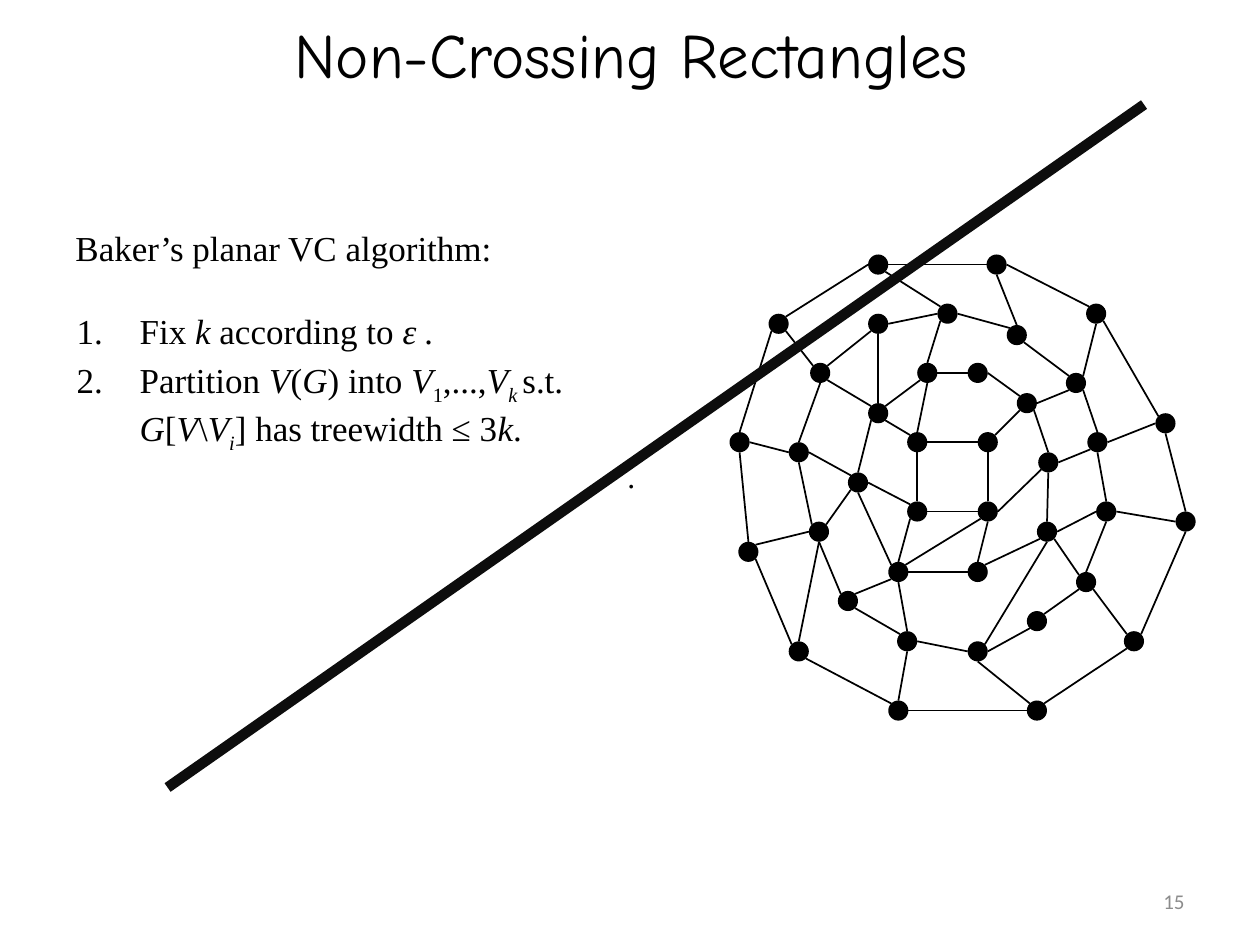
from lxml.etree import SubElement as Sub
from pptx import Presentation
from pptx.dml.color import RGBColor as RGB
from pptx.enum.shapes import MSO_CONNECTOR as Link, MSO_SHAPE as Form
from pptx.enum.text import MSO_ANCHOR as Anchor, PP_ALIGN as Align
from pptx.oxml.ns import qn
from pptx.util import Pt

PX = 9144
BLACK = RGB(0, 0, 0)
DARK = RGB(0x0D, 0x0D, 0x0D)
GRAY = RGB(0x8C, 0x8C, 0x8C)
SIZE = 16
FAR = SIZE / 2
NEAR = FAR * 0.5 ** 0.5
SITES = {
    "n": (0, -FAR), "ne": (NEAR, -NEAR), "e": (FAR, 0), "se": (NEAR, NEAR),
    "s": (0, FAR), "sw": (-NEAR, NEAR), "w": (-FAR, 0), "nw": (-NEAR, -NEAR),
}

INNER = [
    (728, 351), (784, 351), (784, 406), (728, 406), (697, 328),
    (736, 296), (776, 296), (815, 320), (832, 367), (831, 422),
    (776, 454), (713, 454), (681, 383),
]
MIDDLE = [
    (697, 257), (752, 249), (807, 266), (854, 304), (871, 351),
    (878, 406), (862, 462), (823, 493), (776, 517), (720, 509),
    (673, 477), (650, 422), (634, 359), (651, 296),
]
OUTER = [
    (925, 336), (870, 249), (791, 210), (697, 210), (618, 257), (587, 351),
    (594, 438), (634, 517), (713, 564), (823, 564), (900, 509), (941, 414),
]
NODES = INNER + MIDDLE + OUTER

EDGES = """
0e-1w 0s-3n 2w-3e 1s-2n
5e-6w 6e-7nw 7se-8n 8s-9n 9sw-10ne 10w-11e 11nw-12s 12n-4sw 4ne-5sw
13e-14w 14e-15nw 15se-16nw 16se-17n 17s-18n 18s-19n 26ne-13sw 25n-26s
24nw-25s 23nw-24s 23se-22nw 20ne-19sw 21e-20sw 22e-21w
32n-31sw 33n-32s 34nw-33se 31ne-30w 30e-29w 29e-28nw
28se-27nw 27s-38n 38s-37ne 37sw-36ne 36w-35e 35nw-34se
0nw-4se 0n-5s 2e-8sw 3nw-12e 2sw-11ne 10n-2s 11n-3sw 1ne-7sw
4nw-26se 12nw-25e 12sw-24ne 11sw-23ne 11s-22n 9s-21ne 4n-13s
5n-14sw 7e-16sw 8e-17sw 9se-19nw 9e-18w
26nw-31se 25w-32e 24w-33ne 24s-34n 14nw-30se 37nw-19se 38w-18e
27w-17e 28s-16ne 29s-15n 35n-22s 36nw-21s
"""

STEPS = [
    [("Fix ", ""), ("k", "i"), (" according to ", ""), ("ε .", "i")],
    [("Partition ", ""), ("V", "i"), ("(", ""), ("G", "i"), (") into ", ""),
     ("V", "i"), ("1", "sub"), (",...,", ""), ("V", "i"), ("k ", "i sub"),
     ("s.t. ", ""), ("G", "i"), ("[", ""), ("V", "i"), ("\\", ""),
     ("V", "i"), ("i", "i sub"), ("] has treewidth ≤ 3", ""), ("k", "i"),
     (".", "")],
]


def emu(*vals):
    return [round(v * PX) for v in vals]


def site(code):
    name = code.lstrip("0123456789")
    x, y = NODES[int(code.removesuffix(name))]
    dx, dy = SITES[name]
    return x + dx, y + dy


class Deck:
    font = "Times New Roman"
    ink = BLACK

    def __init__(self, wide, high):
        self.prs = Presentation()
        self.prs.slide_width, self.prs.slide_height = emu(wide, high)
        self.slide = self.prs.slides.add_slide(self.prs.slide_layouts[6])
        self.shapes = self.slide.shapes

    def text(self, box, paras, size=20, font=None, color=None, align=Align.LEFT,
             anchor=Anchor.TOP, wrap=True, gap=0, hang=0, count=False):
        frame = self.shapes.add_textbox(*emu(*box)).text_frame
        frame.word_wrap = wrap
        frame.vertical_anchor = anchor
        if isinstance(paras, str):
            paras = [[(paras, "")]]
        for at, runs in enumerate(paras):
            para = frame.add_paragraph() if at else frame.paragraphs[0]
            para.alignment = align
            para.space_before = Pt(gap)
            props = para._p.get_or_add_pPr()
            if hang:
                props.set("marL", str(hang * PX))
                props.set("indent", str(-hang * PX))
            if count:
                Sub(props, qn("a:buFont"), typeface="+mj-lt")
                Sub(props, qn("a:buAutoNum"), type="arabicPeriod")
            for words, style in runs:
                run = para.add_run()
                run.text = words
                run.font.size = Pt(size)
                run.font.name = font or self.font
                run.font.color.rgb = color or self.ink
                run.font.italic = "i" in style.split()
                if "sub" in style:
                    run.font._element.set("baseline", "-25000")

    def dot(self, x, y):
        box = emu(x - FAR, y - FAR, SIZE, SIZE)
        dot = self.shapes.add_shape(Form.OVAL, *box)
        dot.shadow.inherit = False
        dot.fill.solid()
        dot.fill.fore_color.rgb = self.ink
        dot.line.fill.background()

    def line(self, start, end, width=1, color=None):
        line = self.shapes.add_connector(Link.STRAIGHT, *emu(*start, *end))
        line.line.width = Pt(width)
        line.line.color.rgb = color or self.ink
        Sub(line._element.spPr, qn("a:effectLst"))


def main():
    deck = Deck(1000, 750)
    deck.text((51, 0, 900, 84), "Non-Crossing Rectangles", size=36,
              font="Comic Neue", align=Align.CENTER, anchor=Anchor.MIDDLE)
    deck.text((50, 175, 765, 50), "Baker’s planar VC algorithm:", gap=4, hang=50)
    for x, y in NODES:
        deck.dot(x, y)
    for edge in EDGES.split():
        start, end = edge.split("-")
        deck.line(site(start), site(end))
    deck.text((51, 241, 496, 205), STEPS, gap=4, hang=50, count=True)
    deck.text((488, 358, 25, 34), ".", size=18, wrap=False)
    deck.line((908, 83), (133, 625), width=6, color=DARK)
    deck.text((717, 695, 233, 40), "15", size=12, font="Calibri", color=GRAY,
              align=Align.RIGHT, anchor=Anchor.MIDDLE)
    deck.prs.save("out.pptx")


if __name__ == "__main__":
    main()
